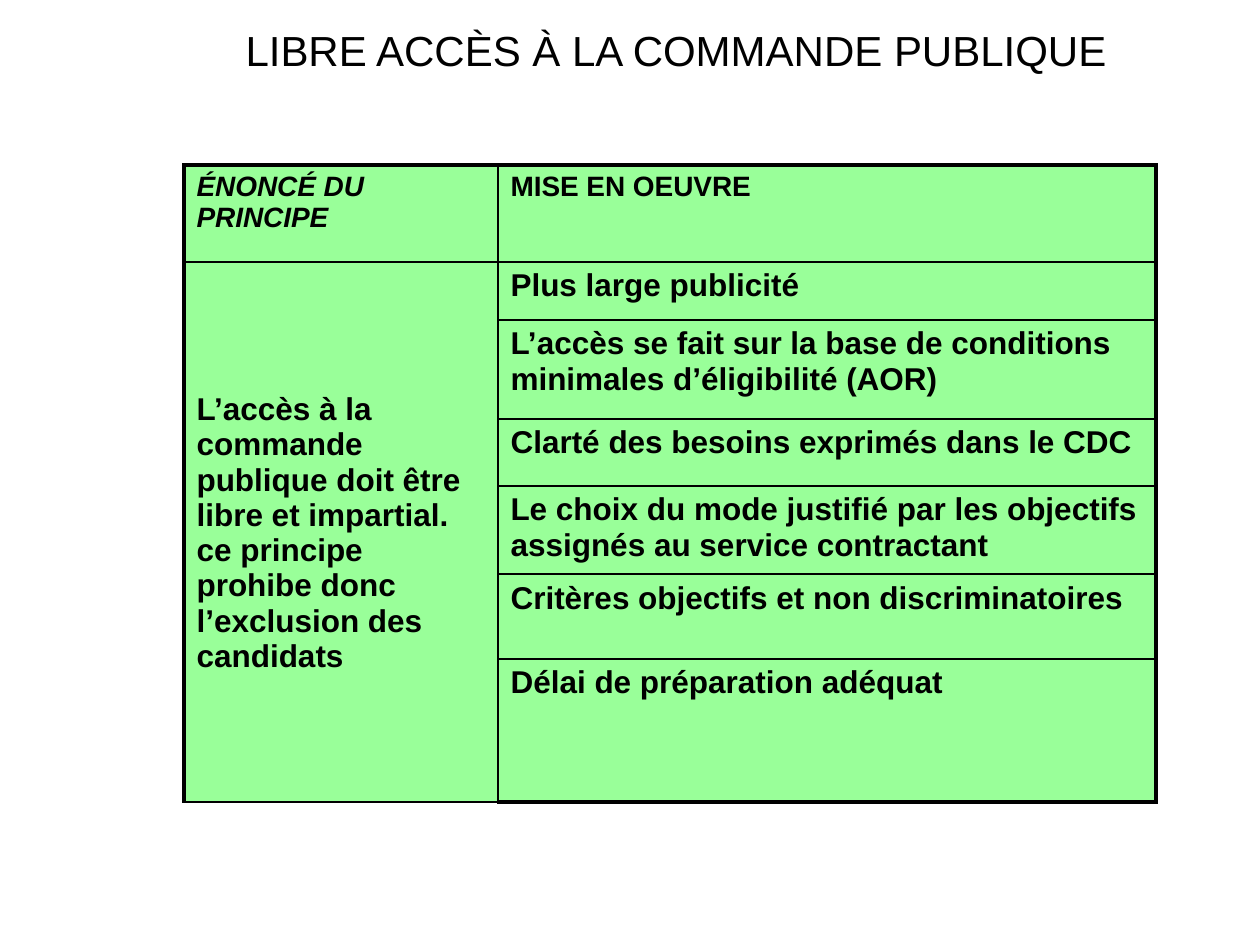
from lxml.etree import SubElement
from pptx import Presentation
from pptx.dml.color import RGBColor
from pptx.enum.text import MSO_ANCHOR, PP_ALIGN
from pptx.oxml.ns import qn
from pptx.util import Inches, Pt

PX = Inches(1) // 126
COLORS = {"text": "000000", "border": "000000", "cell": "99FF99"}
THIN, THICK = 1, 2.25


def style_font(font, size, bold=False):
    font.name = "Arial"
    font.size = Pt(size)
    font.bold = bold
    font.color.rgb = RGBColor.from_string(COLORS["text"])


def add_border(cell, side, width):
    line = SubElement(cell._tc.get_or_add_tcPr(), qn(f"a:ln{side}"), w=str(Pt(width)))
    fill = SubElement(line, qn("a:solidFill"))
    SubElement(fill, qn("a:srgbClr"), val=COLORS["border"])


presentation = Presentation()
presentation.slide_width = Inches(10)
presentation.slide_height = Inches(7.5)
slide = presentation.slides.add_slide(presentation.slide_layouts[6])

title = slide.shapes.add_textbox(128 * PX, -10 * PX, 1112 * PX, 94 * PX)
title_frame = title.text_frame
title_frame.word_wrap = True
title_frame.vertical_anchor = MSO_ANCHOR.BOTTOM
paragraph = title_frame.paragraphs[0]
paragraph.alignment = PP_ALIGN.CENTER
for text, size in (("LIBRE ACCÈS À LA COMMANDE PUBLIQUE", 24), (" ", 32)):
    run = paragraph.add_run()
    run.text = text
    style_font(run.font, size)

rows = [
    ("ÉNONCÉ DU PRINCIPE", "MISE EN OEUVRE"),
    ("L’accès à la commande publique doit être libre et impartial. "
     "ce principe prohibe donc l’exclusion des candidats", "Plus large publicité"),
    ("", "L’accès se fait sur la base de conditions minimales d’éligibilité (AOR)"),
    ("", "Clarté des besoins exprimés dans le CDC"),
    ("", "Le choix du mode justifié par les objectifs assignés au service contractant"),
    ("", "Critères objectifs et non discriminatoires"),
    ("", "Délai de préparation adéquat"),
]
column_widths = [314, 658]
row_heights = [97, 58, 99, 67, 86, 85, 143]
last_row, last_column = len(rows) - 1, len(column_widths) - 1

table = slide.shapes.add_table(
    len(rows), len(column_widths), 184 * PX, 165 * PX,
    sum(column_widths) * PX, sum(row_heights) * PX).table
table.first_row = False
table.horz_banding = False
for column, width in zip(table.columns, column_widths):
    column.width = width * PX
for row, height in zip(table.rows, row_heights):
    row.height = height * PX

for row_index, texts in enumerate(rows):
    for column_index, text in enumerate(texts):
        cell = table.cell(row_index, column_index)
        outer_sides = {"L": column_index == 0, "R": column_index == last_column,
                       "T": row_index == 0, "B": row_index == last_row}
        for side, outer in outer_sides.items():
            add_border(cell, side, THICK if outer else THIN)
        cell.fill.solid()
        cell.fill.fore_color.rgb = RGBColor.from_string(COLORS["cell"])
        paragraph = cell.text_frame.paragraphs[0]
        paragraph.text = text
        style_font(paragraph.font, 16 if row_index == 0 else 18, bold=True)

table.cell(0, 0).text_frame.paragraphs[0].font.italic = True
principle = table.cell(1, 0)
principle.merge(table.cell(last_row, 0))
principle.margin_top = 130 * PX

presentation.save("out.pptx")
